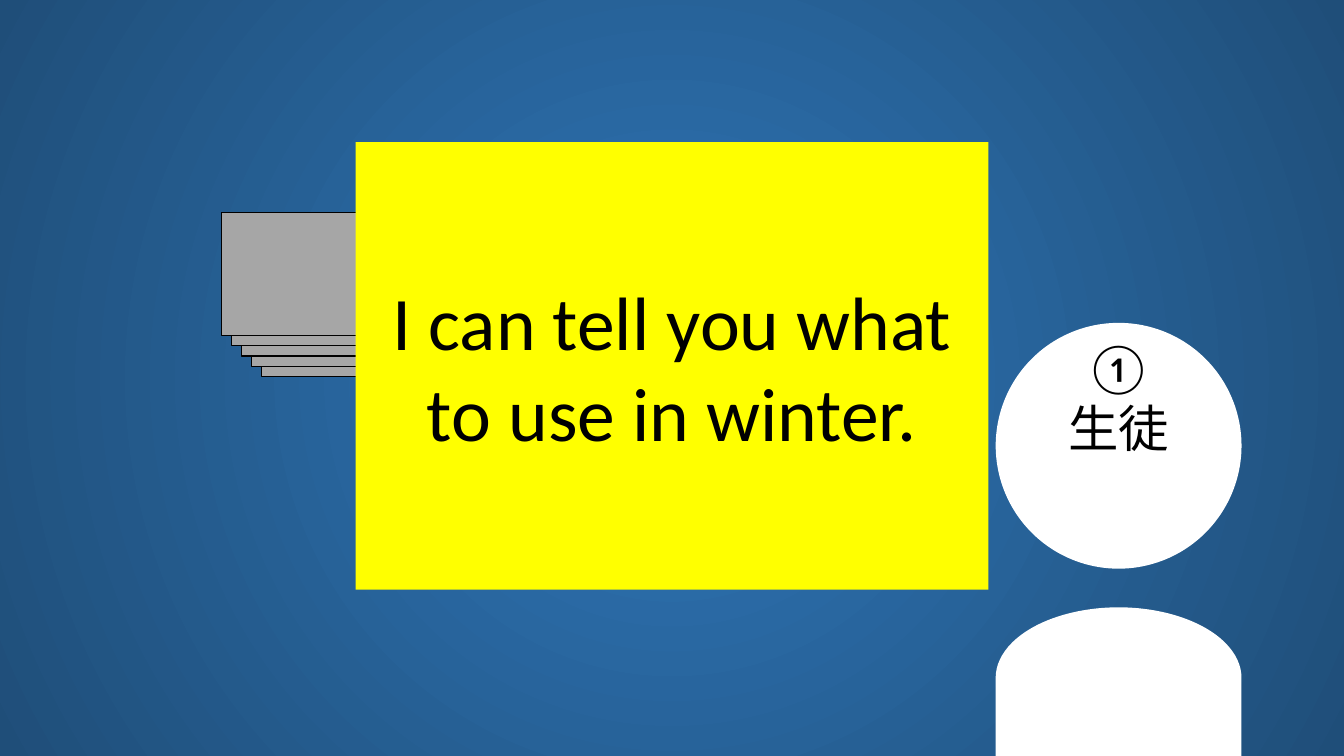
"""Build a slide with a student holding up a large yellow sentence card."""
from lxml import etree
from pptx import Presentation
from pptx.dml.color import RGBColor
from pptx.enum.shapes import MSO_SHAPE
from pptx.enum.text import MSO_ANCHOR, MSO_AUTO_SIZE, PP_ALIGN
from pptx.oxml.ns import qn
from pptx.util import Pt

RECTANGLE = MSO_SHAPE.RECTANGLE
OVAL = MSO_SHAPE.OVAL
TERMINATOR = MSO_SHAPE.FLOWCHART_TERMINATOR
MIDDLE = MSO_ANCHOR.MIDDLE
FIT_SHAPE = MSO_AUTO_SIZE.SHAPE_TO_FIT_TEXT
CENTER = PP_ALIGN.CENTER


def add_filled_shape(kind, left, top, width, height, color):
    shape = slide.shapes.add_shape(kind, Pt(left), Pt(top), Pt(width), Pt(height))
    shape.shadow.inherit = False
    shape.fill.solid()
    shape.fill.fore_color.rgb = RGBColor.from_string(color)
    shape.line.fill.background()
    return shape


def add_centered_run(paragraph, text, size):
    paragraph.alignment = CENTER
    run = paragraph.add_run()
    run.text = text
    run.font.name = "Calibri"
    run.font.size = Pt(size)
    run.font.color.rgb = RGBColor.from_string("000000")


presentation = Presentation()
presentation.slide_width = Pt(960)
presentation.slide_height = Pt(540)
slide = presentation.slides.add_slide(presentation.slide_layouts[6])

background = slide.background.fill
background.gradient()
for stop, position, color in zip(background.gradient_stops, (0, 1), ("2E75B6", "1F4E79")):
    stop.position = position
    stop.color.rgb = RGBColor.from_string(color)
gradient = slide.element.find(".//" + qn("a:gradFill"))
gradient.remove(gradient.find(qn("a:lin")))
circle = etree.SubElement(gradient, qn("a:path"), {"path": "circle"})
etree.SubElement(circle, qn("a:fillToRect"), dict.fromkeys("ltrb", "50000"))

for step in range(4, -1, -1):
    gray_card = add_filled_shape(
        RECTANGLE, 158.2 + 7.1 * step, 151.7 + 7.4 * step, 155.5, 87.8, "A6A6A6")
    gray_card.line.color.rgb = RGBColor.from_string("000000")
    gray_card.line.width = Pt(1)

sentence_card = add_filled_shape(RECTANGLE, 254, 101.5, 452, 319.7, "FFFF00")
sentence_card.text_frame.vertical_anchor = MIDDLE
add_centered_run(
    sentence_card.text_frame.paragraphs[0], "I can tell you what to use in winter.", 54)

add_filled_shape(OVAL, 711.2, 230.6, 175.6, 175.6, "FFFFFF")
student_body = add_filled_shape(TERMINATOR, 642.4, 502.6, 313.2, 175.6, "FFFFFF")
student_body.rotation = 90

student_label = slide.shapes.add_textbox(Pt(734.4), Pt(236.9), Pt(129.6), Pt(94.5))
label_frame = student_label.text_frame
label_frame.word_wrap = True
label_frame.auto_size = FIT_SHAPE
add_centered_run(label_frame.paragraphs[0], "①", 36)
add_centered_run(label_frame.add_paragraph(), "生徒", 36)

presentation.save("out.pptx")
